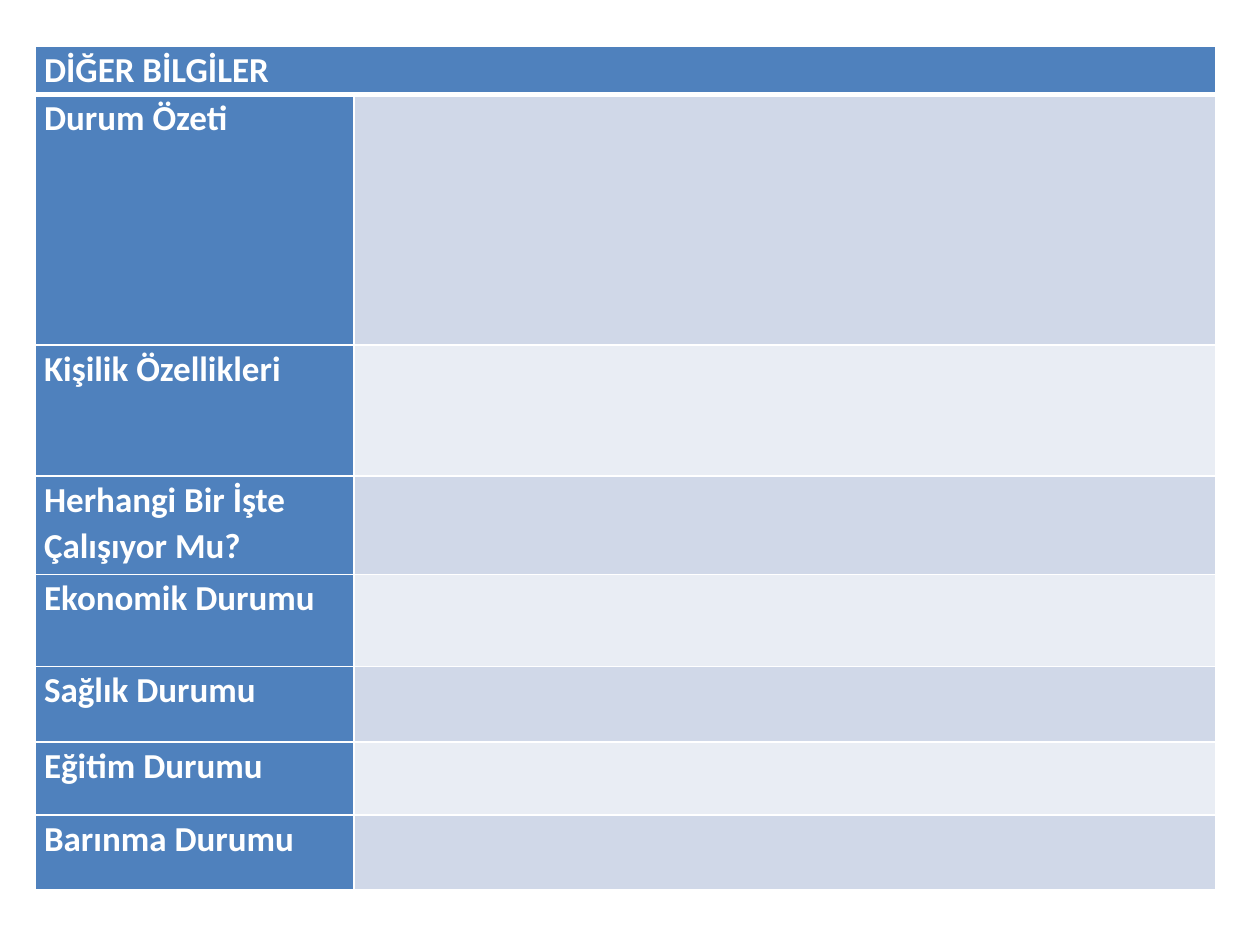
import pptx
import pptx.util
import pptx.dml.color
import pptx.oxml.ns
import lxml.etree

Inches = pptx.util.Inches
RGBColor = pptx.dml.color.RGBColor

WHITE = RGBColor(0xFF, 0xFF, 0xFF)
BLUE = RGBColor(0x4F, 0x81, 0xBD)
BANDS = (RGBColor(0xD0, 0xD8, 0xE8), RGBColor(0xE9, 0xED, 0xF4))

HEADING = "DİĞER BİLGİLER"
HEADING_HEIGHT = 0.38
FIELDS = [
    ("Durum Özeti", 1.99),
    ("Kişilik Özellikleri", 1.04),
    ("Herhangi Bir İşte Çalışıyor Mu?", 0.78),
    ("Ekonomik Durumu", 0.73),
    ("Sağlık Durumu", 0.6),
    ("Eğitim Durumu", 0.58),
    ("Barınma Durumu", 0.59),
]
LABEL_SHARE = 0.27
LABEL_FONT = {"name": "Calibri", "size": pptx.util.Pt(20), "bold": True}
LABEL_MARGINS = {
    "margin_left": Inches(0.07),
    "margin_right": Inches(0.07),
    "margin_top": 0,
    "margin_bottom": 0,
}


def set_format(target, values):
    for name, value in values.items():
        setattr(target, name, value)


def set_borders(cell, widths):
    qn = pptx.oxml.ns.qn
    properties = cell._tc.get_or_add_tcPr()
    for side, width in zip(("a:lnL", "a:lnR", "a:lnT", "a:lnB"), widths):
        line = lxml.etree.SubElement(properties, qn(side), w=str(pptx.util.Pt(width)))
        fill = lxml.etree.SubElement(line, qn("a:solidFill"))
        lxml.etree.SubElement(fill, qn("a:srgbClr"), val=str(WHITE))


def fill_cell(cell, color):
    cell.fill.solid()
    cell.fill.fore_color.rgb = color


def write_label(cell, text):
    fill_cell(cell, BLUE)
    set_format(cell, LABEL_MARGINS)
    para = cell.text_frame.paragraphs[0]
    para.line_spacing = 1.07
    span = para.add_run()
    span.text = text
    set_format(span.font, LABEL_FONT)
    span.font.color.rgb = WHITE


def add_information_table(page, left, top, width, height):
    heights = [HEADING_HEIGHT] + [row_height for _, row_height in FIELDS]
    frame = page.shapes.add_table(len(heights), 2, left, top, width, height)
    table = frame.table
    label_width = int(width * LABEL_SHARE)
    for column, column_width in zip(table.columns, (label_width, width - label_width)):
        column.width = column_width
    for index, row_height in enumerate(heights):
        table.rows[index].height = int(height * row_height / sum(heights))
        above = 3 if index == 1 else 1
        below = 3 if index == 0 else 1
        for cell in table.rows[index].cells:
            set_borders(cell, (1, 1, above, below))

    heading = table.cell(0, 0)
    heading.merge(table.cell(0, 1))
    write_label(heading, HEADING)
    for index, (label, _) in enumerate(FIELDS):
        write_label(table.cell(index + 1, 0), label)
        fill_cell(table.cell(index + 1, 1), BANDS[index % 2])


def main():
    deck = pptx.Presentation()
    set_format(deck, {"slide_width": Inches(10), "slide_height": Inches(7.5)})
    page = deck.slides.add_slide(deck.slide_layouts[6])
    add_information_table(page, Inches(0.28), Inches(0.37), Inches(9.37), Inches(6.69))
    deck.save("out.pptx")


if __name__ == "__main__":
    main()
